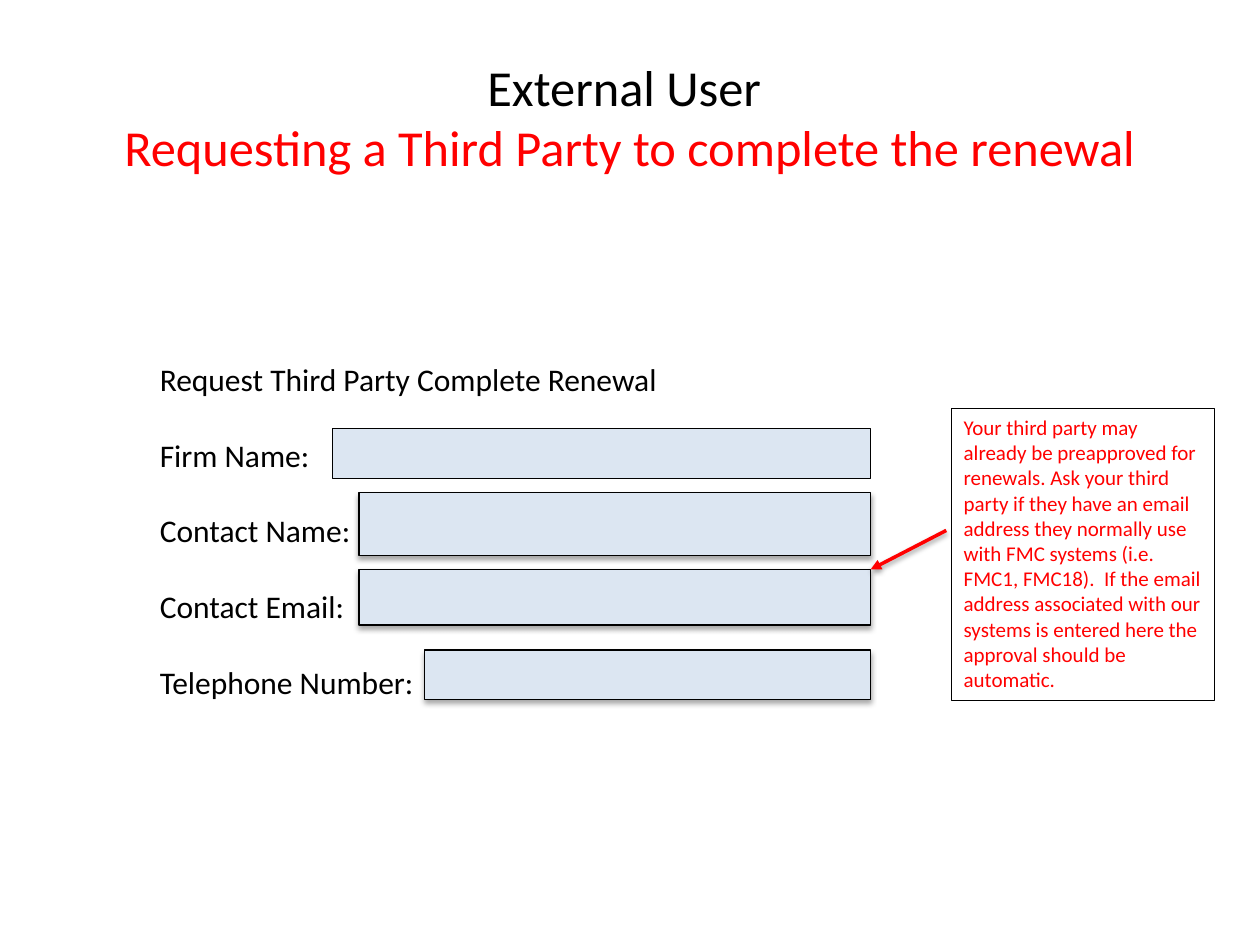
from dataclasses import dataclass

from lxml import etree
from pptx import Presentation
from pptx import util as u
from pptx.dml.color import RGBColor
from pptx.enum import shapes, text
from pptx.oxml.ns import qn


@dataclass(frozen=True)
class Theme:
    font: str = "Calibri"
    ink: RGBColor = RGBColor(0, 0, 0)
    accent: RGBColor = RGBColor(255, 0, 0)
    field: RGBColor = RGBColor(0xDC, 0xE6, 0xF2)
    title_size: float = 28.8
    label_size: float = 18
    note_size: float = 12
    outline: float = 0.75
    arrow: float = 2


THEME = Theme()
LABELS = ["Request Third Party Complete Renewal", "Firm Name:", "Contact Name:",
          "Contact Email:", "Telephone Number:"]
# Left, top and height of each field inside the form, and whether it has a shadow
FIELDS = [(1.47, 0.59, 0.4, False), (1.68, 1.1, 0.5, True),
          (1.68, 1.71, 0.44, True), (2.2, 2.35, 0.39, True)]
NOTE = ("Your third party may already be preapproved for renewals. Ask your third party "
        "if they have an email address they normally use with FMC systems (i.e. FMC1, "
        "FMC18).  If the email address associated with our systems is entered here the "
        "approval should be automatic.")


def format_run(run, size, color):
    run.font.name = THEME.font
    run.font.size = u.Pt(size)
    run.font.color.rgb = color


def add_shadow(shape, opacity, distance):
    """Put a soft shadow straight below the shape or connector."""
    effects = etree.SubElement(shape._element.spPr, qn("a:effectLst"))
    shadow = etree.SubElement(effects, qn("a:outerShdw"), blurRad=str(u.Pt(3.1)),
                              dist=str(u.Pt(distance)), dir="5400000", rotWithShape="0")
    color = etree.SubElement(shadow, qn("a:srgbClr"), val=str(THEME.ink))
    etree.SubElement(color, qn("a:alpha"), val=str(opacity * 1000))


def add_box(slide, left, top, width, height):
    """Add an outlined rectangle; its fill and shadow are left to the caller."""
    box = slide.shapes.add_shape(shapes.MSO_SHAPE.RECTANGLE, u.Inches(left), u.Inches(top),
                                 u.Inches(width), u.Inches(height))
    box.line.color.rgb = THEME.ink
    box.line.width = u.Pt(THEME.outline)
    return box


def add_title(slide, left, top, width, height):
    title = slide.shapes.title
    title.left, title.top = u.Inches(left), u.Inches(top)
    title.width, title.height = u.Inches(width), u.Inches(height)
    frame = title.text_frame
    frame.text = "External User \vRequesting a Third Party to complete the renewal"
    frame.auto_size = text.MSO_AUTO_SIZE.NONE
    frame.vertical_anchor = text.MSO_ANCHOR.MIDDLE
    paragraph = frame.paragraphs[0]
    paragraph.alignment = text.PP_ALIGN.CENTER
    for run, color in zip(paragraph.runs, (THEME.ink, THEME.accent)):
        format_run(run, THEME.title_size, color)


def add_form(slide, left, top, width, height):
    """Add the labels and, to their right, fields that share one right edge."""
    labels = slide.shapes.add_textbox(u.Inches(left), u.Inches(top),
                                      u.Inches(4.36), u.Inches(height))
    frame = labels.text_frame
    frame.word_wrap = True
    frame.text = "\n".join(LABELS)
    for index, paragraph in enumerate(frame.paragraphs):
        if index:
            paragraph.space_before = u.Pt(21.6)
        format_run(paragraph.runs[0], THEME.label_size, THEME.ink)

    for offset, drop, field_height, shaded in FIELDS:
        field = add_box(slide, left + offset, top + drop, width - offset, field_height)
        field.fill.solid()
        field.fill.fore_color.rgb = THEME.field
        if shaded:
            add_shadow(field, 35, 1.8)
        else:
            field.shadow.inherit = False


def add_arrow(slide, start, end):
    arrow = slide.shapes.add_connector(shapes.MSO_CONNECTOR.STRAIGHT,
                                       *(u.Inches(value) for value in start + end))
    arrow.line.color.rgb = THEME.accent
    arrow.line.width = u.Pt(THEME.arrow)
    etree.SubElement(arrow.line._get_or_add_ln(), qn("a:tailEnd"), type="triangle")
    add_shadow(arrow, 38, 1.6)


def add_note(slide, left, top, width, height):
    note = add_box(slide, left, top, width, height)
    note.fill.background()
    note.shadow.inherit = False
    frame = note.text_frame
    frame.word_wrap = True
    frame.vertical_anchor = text.MSO_ANCHOR.TOP
    frame.text = NOTE
    paragraph = frame.paragraphs[0]
    paragraph.alignment = text.PP_ALIGN.LEFT
    format_run(paragraph.runs[0], THEME.note_size, THEME.accent)


def main():
    presentation = Presentation()
    presentation.slide_width, presentation.slide_height = u.Inches(10), u.Inches(7.5)
    slide = presentation.slides.add_slide(presentation.slide_layouts.get_by_name("Title Only"))
    add_title(slide, 0.5, 0.3, 9, 1.25)
    add_form(slide, 1.17, 2.81, 5.74, 3.43)
    add_arrow(slide, (7.51, 4.21), (6.91, 4.52))
    add_note(slide, 7.55, 3.24, 2.09, 2.32)
    presentation.save("out.pptx")


if __name__ == "__main__":
    main()
